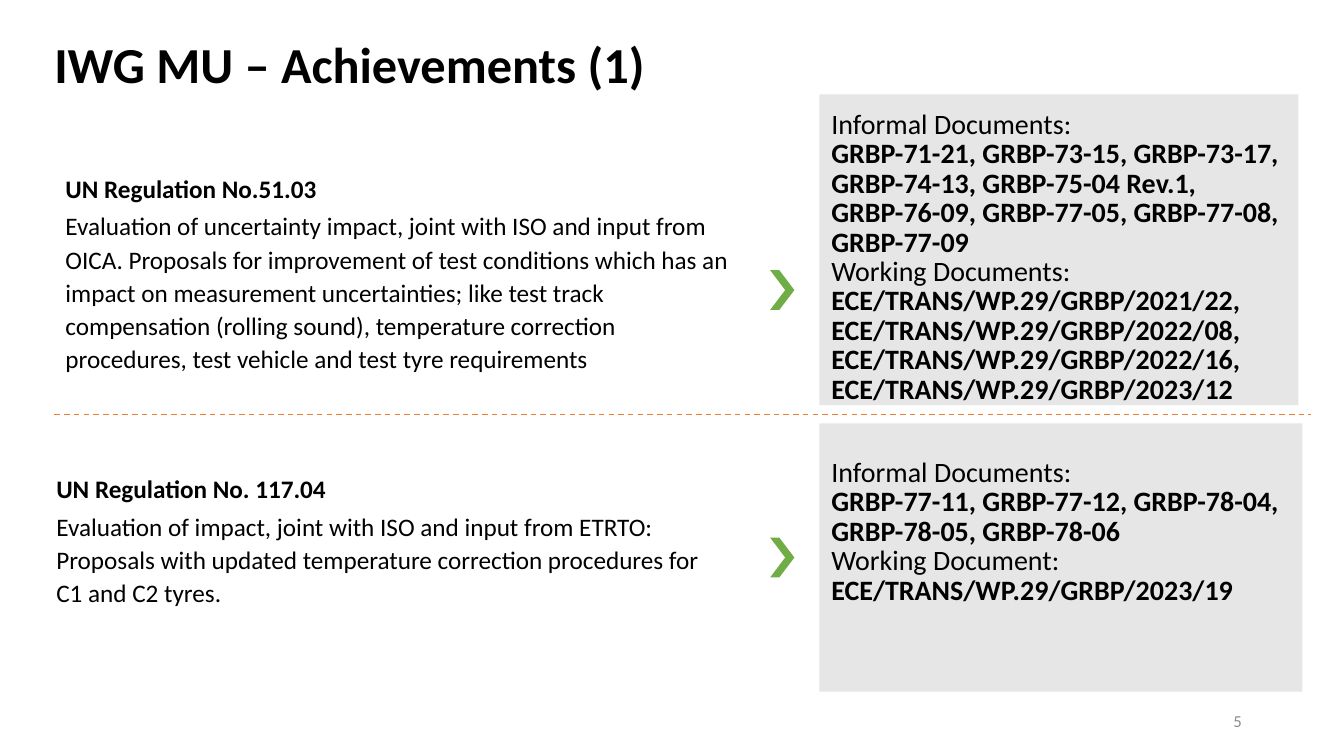
from pptx import Presentation
from pptx.dml.color import RGBColor
from pptx.enum.dml import MSO_LINE
from pptx.enum.shapes import MSO_CONNECTOR, MSO_SHAPE
from pptx.enum.text import MSO_ANCHOR as Anchor, PP_ALIGN as Align
from pptx.oxml.ns import qn
from pptx.util import Cm, Pt
from lxml.etree import SubElement
from dataclasses import dataclass

TITLE = "IWG MU – Achievements (1)"
PAGE_NUMBER = "5"
ROWS = [
    {
        "summary": [
            ("UN Regulation No.51.03", True),
            ("Evaluation of uncertainty impact, joint with ISO and input from OICA. "
             "Proposals for improvement of test conditions which has an impact on "
             "measurement uncertainties; like test track compensation (rolling sound), "
             "temperature correction procedures, test vehicle and test tyre requirements", False),
        ],
        "summary_box": (1.65, 4.29, 16.71, 6.86),
        "summary_anchor": Anchor.TOP,
        "documents": [
            ("Informal Documents:", False),
            ("GRBP-71-21, GRBP-73-15, GRBP-73-17, GRBP-74-13, GRBP-75-04 Rev.1, \v"
             "GRBP-76-09, GRBP-77-05, GRBP-77-08, GRBP-77-09", True),
            ("Working Documents:", False),
            ("ECE/TRANS/WP.29/GRBP/2021/22, \vECE/TRANS/WP.29/GRBP/2022/08, \v"
             "ECE/TRANS/WP.29/GRBP/2022/16, \vECE/TRANS/WP.29/GRBP/2023/12", True),
        ],
        "panel_box": (20.65, 2.38, 12.07, 7.83),
        "panel_insets": (0.3, 0.6, 0.3, 0.2),
        "chevron_top": 6.81,
    },
    {
        "summary": [
            ("UN Regulation No. 117.04", True),
            ("Evaluation of impact, joint with ISO and input from ETRTO: Proposals with "
             "updated temperature correction procedures for C1 and C2 tyres.", False),
        ],
        "summary_box": (1.42, 10.67, 16.92, 5.84),
        "summary_anchor": Anchor.MIDDLE,
        "documents": [
            ("Informal Documents:", False),
            ("GRBP-77-11, GRBP-77-12, GRBP-78-04, GRBP-78-05, GRBP-78-06", True),
            ("Working Document:", False),
            ("ECE/TRANS/WP.29/GRBP/2023/19", True),
        ],
        "panel_box": (20.65, 10.67, 12.17, 6.76),
        "panel_insets": (0.3, 0.2, 0.3, 1.48),
        "chevron_top": 13.55,
    },
]


@dataclass(frozen=True)
class Theme:
    font: str = "Calibri"
    text: str = "000000"
    muted: str = "8C8C8C"
    panel: str = "E7E6E6"
    chevron: str = "70AD47"
    divider: str = "ED7D31"
    title_size: int = 36
    document_size: int = 20
    summary_size: int = 18
    number_size: int = 12


THEME = Theme()
CHEVRON_LEFT, CHEVRON_WIDTH, CHEVRON_HEIGHT = 19.41, 0.61, 1.0
DIVIDER_LEFT, DIVIDER_RIGHT, DIVIDER_TOP = 1.37, 33.05, 10.44


def lengths(values):
    return [Cm(value) for value in values]


def write(shape, lines, size, color=THEME.text, insets=(0.25, 0.13, 0.25, 0.13),
          anchor=Anchor.MIDDLE, align=Align.LEFT, line_spacing=1.0, gap=0):
    frame = shape.text_frame
    frame.word_wrap = True
    frame.vertical_anchor = anchor
    frame.margin_left, frame.margin_top, frame.margin_right, frame.margin_bottom = lengths(insets)
    for index, (text, bold) in enumerate(lines):
        paragraph = frame.add_paragraph() if index else frame.paragraphs[0]
        paragraph.text = text
        paragraph.alignment = align
        paragraph.line_spacing = line_spacing
        paragraph.space_before = Pt(gap if index else 0)
        paragraph.font.name = THEME.font
        paragraph.font.size = Pt(size)
        paragraph.font.bold = bold
        paragraph.font.color.rgb = RGBColor.from_string(color)


def add_text(slide, box, lines, size, **options):
    write(slide.shapes.add_textbox(*lengths(box)), lines, size, **options)


def add_filled(slide, preset, box, color):
    shape = slide.shapes.add_shape(preset, *lengths(box))
    shape.shadow.inherit = False
    shape.fill.solid()
    shape.fill.fore_color.rgb = RGBColor.from_string(color)
    shape.line.fill.background()
    return shape


def add_divider(slide):
    divider = slide.shapes.add_connector(
        MSO_CONNECTOR.STRAIGHT,
        *lengths((DIVIDER_LEFT, DIVIDER_TOP, DIVIDER_RIGHT, DIVIDER_TOP)))
    divider.line.color.rgb = RGBColor.from_string(THEME.divider)
    divider.line.width = Pt(1)
    divider.line.dash_style = MSO_LINE.DASH
    SubElement(divider.element.spPr, qn("a:effectLst"))


def add_row(slide, row):
    add_text(slide, row["summary_box"], row["summary"], THEME.summary_size,
             insets=(0, 0, 0, 0), anchor=row["summary_anchor"], line_spacing=1.1, gap=3)
    chevron_box = (CHEVRON_LEFT, row["chevron_top"], CHEVRON_WIDTH, CHEVRON_HEIGHT)
    chevron = add_filled(slide, MSO_SHAPE.CHEVRON, chevron_box, THEME.chevron)
    chevron.adjustments[0] = 0.62
    panel = add_filled(slide, MSO_SHAPE.RECTANGLE, row["panel_box"], THEME.panel)
    write(panel, row["documents"], THEME.document_size,
          insets=row["panel_insets"], line_spacing=Pt(21))


def main():
    presentation = Presentation()
    presentation.slide_width, presentation.slide_height = Cm(33.87), Cm(19.05)
    slide = presentation.slides.add_slide(presentation.slide_layouts[6])
    add_text(slide, (1.12, -0.15, 31.37, 3.68), [(TITLE, True)],
             THEME.title_size, line_spacing=0.9)
    for row in ROWS:
        add_row(slide, row)
    add_divider(slide)
    add_text(slide, (23.93, 17.65, 7.62, 1.02), [(PAGE_NUMBER, False)],
             THEME.number_size, color=THEME.muted, align=Align.RIGHT)
    presentation.save("out.pptx")


if __name__ == "__main__":
    main()
